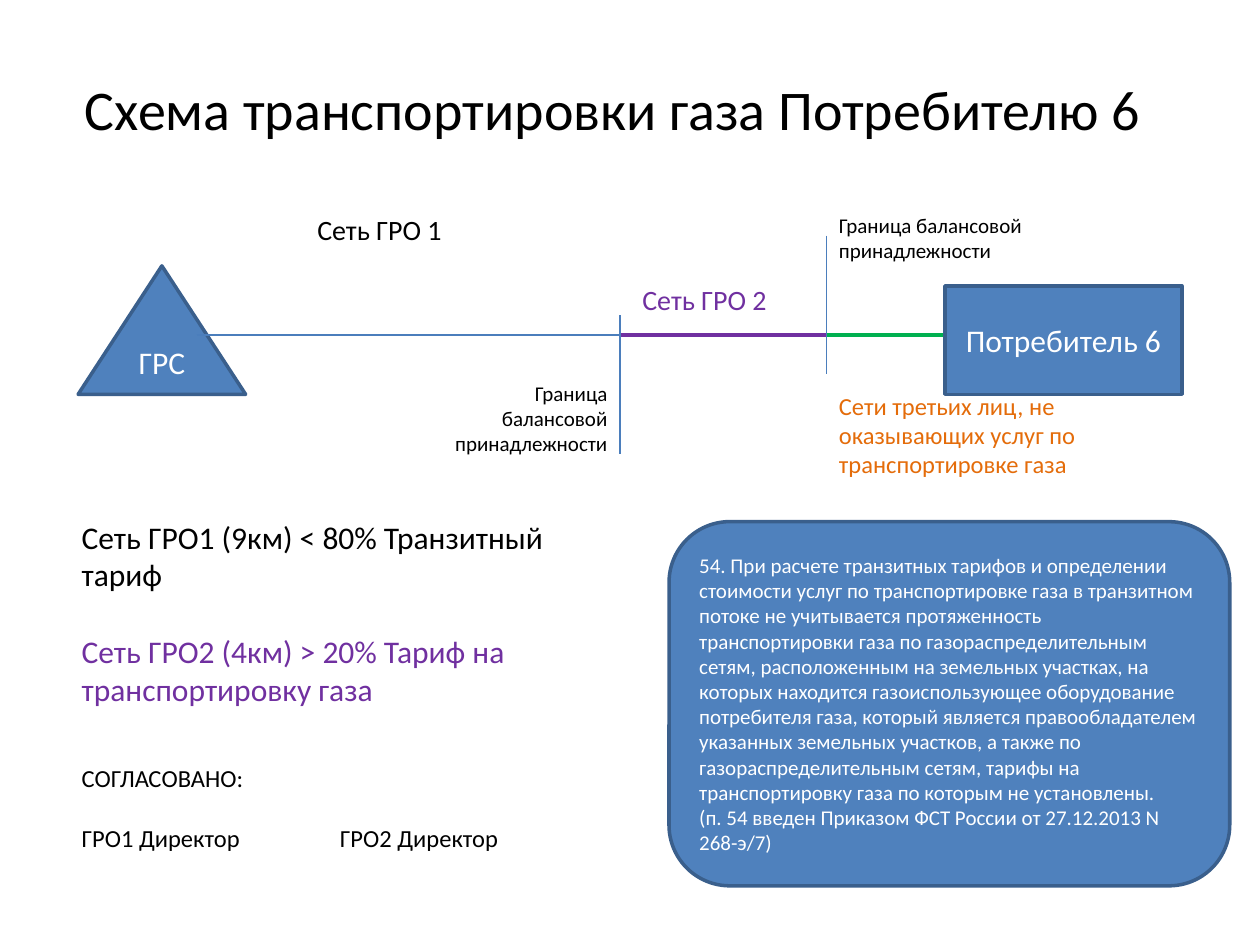
from lxml.etree import SubElement
from pptx import Presentation
from pptx.dml.color import RGBColor
from pptx.enum.shapes import MSO_CONNECTOR, MSO_SHAPE
from pptx.enum.text import MSO_ANCHOR, MSO_AUTO_SIZE, PP_ALIGN
from pptx.oxml.ns import qn
from pptx.util import Inches, Pt

FONT = "Calibri"
BLACK = RGBColor(0x00, 0x00, 0x00)
WHITE = RGBColor(0xFF, 0xFF, 0xFF)
BLUE = RGBColor(0x4F, 0x81, 0xBD)
DARK_BLUE = RGBColor(0x3A, 0x5F, 0x8C)
LINE_BLUE = RGBColor(0x4B, 0x7E, 0xBC)
PURPLE = RGBColor(0x70, 0x30, 0xA0)
GREEN = RGBColor(0x00, 0xB0, 0x50)
ORANGE = RGBColor(0xE4, 0x6C, 0x0A)

BOUNDARY = "Граница балансовой принадлежности"
RULE = (
    "54. При расчете транзитных тарифов и определении стоимости услуг по "
    "транспортировке газа в транзитном потоке не учитывается протяженность "
    "транспортировки газа по газораспределительным сетям, расположенным на "
    "земельных участках, на которых находится газоиспользующее оборудование "
    "потребителя газа, который является правообладателем указанных земельных "
    "участков, а также по газораспределительным сетям, тарифы на "
    "транспортировку газа по которым не установлены.",
    "(п. 54 введен Приказом ФСТ России от 27.12.2013 N 268-э/7)",
)


def format_paragraph(p, text, size, color, align=PP_ALIGN.LEFT):
    p.text = text
    p.alignment = align
    p.font.name = FONT
    p.font.size = Pt(size)
    p.font.color.rgb = color


def add_label(slide, box, text, size, color=BLACK, align=PP_ALIGN.LEFT):
    tf = slide.shapes.add_textbox(*map(Inches, box)).text_frame
    tf.word_wrap = True
    tf.auto_size = MSO_AUTO_SIZE.SHAPE_TO_FIT_TEXT
    format_paragraph(tf.paragraphs[0], text, size, color, align)


def add_block(slide, kind, box, texts, size, align=PP_ALIGN.CENTER):
    sp = slide.shapes.add_shape(kind, *map(Inches, box))
    sp.shadow.inherit = False
    sp.fill.solid()
    sp.fill.fore_color.rgb = BLUE
    sp.line.color.rgb = DARK_BLUE
    sp.line.width = Pt(2)
    tf = sp.text_frame
    tf.word_wrap = True
    tf.vertical_anchor = MSO_ANCHOR.MIDDLE
    for i, text in enumerate(texts):
        p = tf.add_paragraph() if i else tf.paragraphs[0]
        format_paragraph(p, text, size, WHITE, align)


def add_line(slide, x1, y1, x2, y2, color=LINE_BLUE, width=0.75):
    line = slide.shapes.add_connector(
        MSO_CONNECTOR.STRAIGHT, *map(Inches, (x1, y1, x2, y2)))
    line.line.color.rgb = color
    line.line.width = Pt(width)
    SubElement(line._element.spPr, qn("a:effectLst"))


def add_title(slide, box, text):
    title = slide.shapes.title
    title.left, title.top, title.width, title.height = map(Inches, box)
    title.text_frame.vertical_anchor = MSO_ANCHOR.MIDDLE
    format_paragraph(title.text_frame.paragraphs[0], text, 32, BLACK,
                     PP_ALIGN.CENTER)


def add_scheme(slide, box):
    left, top, width, height = box
    right = left + width
    pipe_y = top + 1.02
    border1, border2 = left + 4.3, left + 5.94
    consumer_x = right - 1.88

    # Gas station and the pipeline sections of each network
    add_block(slide, MSO_SHAPE.ISOSCELES_TRIANGLE,
              (left, top + 0.47, 1.33, 1.02), ["ГРС"], 18)
    add_line(slide, left + 0.94, pipe_y, border1, pipe_y)
    add_line(slide, border1, pipe_y, border2, pipe_y, PURPLE, 2)
    add_line(slide, border2, pipe_y, consumer_x, pipe_y, GREEN, 2)
    add_block(slide, MSO_SHAPE.RECTANGLE,
              (consumer_x, top + 0.63, 1.88, 0.86), ["Потребитель 6"], 18)

    # Balance boundaries
    for x, y in ((border1, top + 0.86), (border2, top + 0.23)):
        add_line(slide, x, y, x, y + 1.1)
    add_label(slide, (border1 - 1.64, top + 1.33, 1.64, 0.71), BOUNDARY, 12,
              align=PP_ALIGN.RIGHT)
    add_label(slide, (border2, top, 2.03, 0.5), BOUNDARY, 12)

    # Network names
    add_label(slide, (left + 1.8, top, 1.72, 0.37), "Сеть ГРО 1", 16)
    add_label(slide, (border1 + 0.08, top + 0.55, 1.33, 0.37), "Сеть ГРО 2",
              16, PURPLE)
    add_label(slide, (border2, top + 1.41, 2.27, 0.81),
              "Сети третьих лиц, не оказывающих услуг по транспортировке газа",
              14, ORANGE)


def add_tariffs(slide, box):
    tf = slide.shapes.add_textbox(*map(Inches, box)).text_frame
    tf.word_wrap = True
    lines = (  # text, size, colour, space before
        ("Сеть ГРО1 (9км) < 80% Транзитный тариф", 18, BLACK, 0),
        ("Сеть ГРО2 (4км) > 20% Тариф на транспортировку газа", 18, PURPLE, 22),
        ("СОГЛАСОВАНО:", 14, BLACK, 32),
        ("ГРО1 Директор\tГРО2 Директор", 14, BLACK, 17),
    )
    for i, (text, size, color, gap) in enumerate(lines):
        p = tf.add_paragraph() if i else tf.paragraphs[0]
        p.space_before = Pt(gap)
        if "\t" in text:
            tabs = SubElement(p._p.get_or_add_pPr(), qn("a:tabLst"))
            SubElement(tabs, qn("a:tab"), pos=str(Inches(2.05)), algn="l")
        format_paragraph(p, text, size, color)


def add_rule(slide, box):
    add_block(slide, MSO_SHAPE.ROUNDED_RECTANGLE, box, RULE, 12, PP_ALIGN.LEFT)


def main():
    prs = Presentation()
    prs.slide_width, prs.slide_height = Inches(10), Inches(7.5)
    slide = prs.slides.add_slide(prs.slide_layouts[5])
    add_title(slide, (0.23, 0.23, 9.27, 1.25),
              "Схема транспортировки газа Потребителю 6")
    add_scheme(slide, (0.62, 1.64, 8.76, 2.22))
    add_tariffs(slide, (0.55, 4.06, 4.53, 2.76))
    add_rule(slide, (5.31, 4.14, 4.45, 2.89))
    prs.save("out.pptx")


if __name__ == "__main__":
    main()
